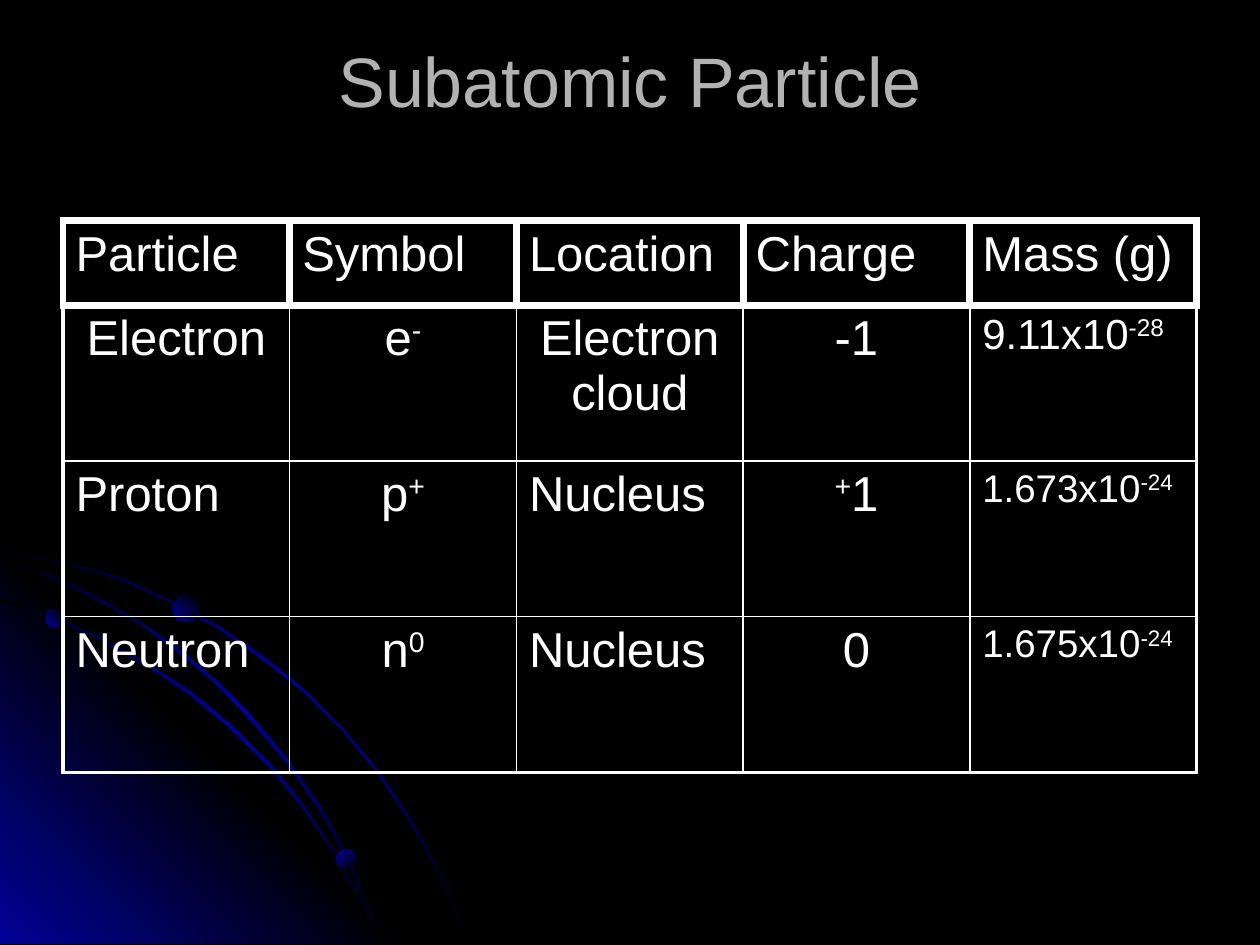
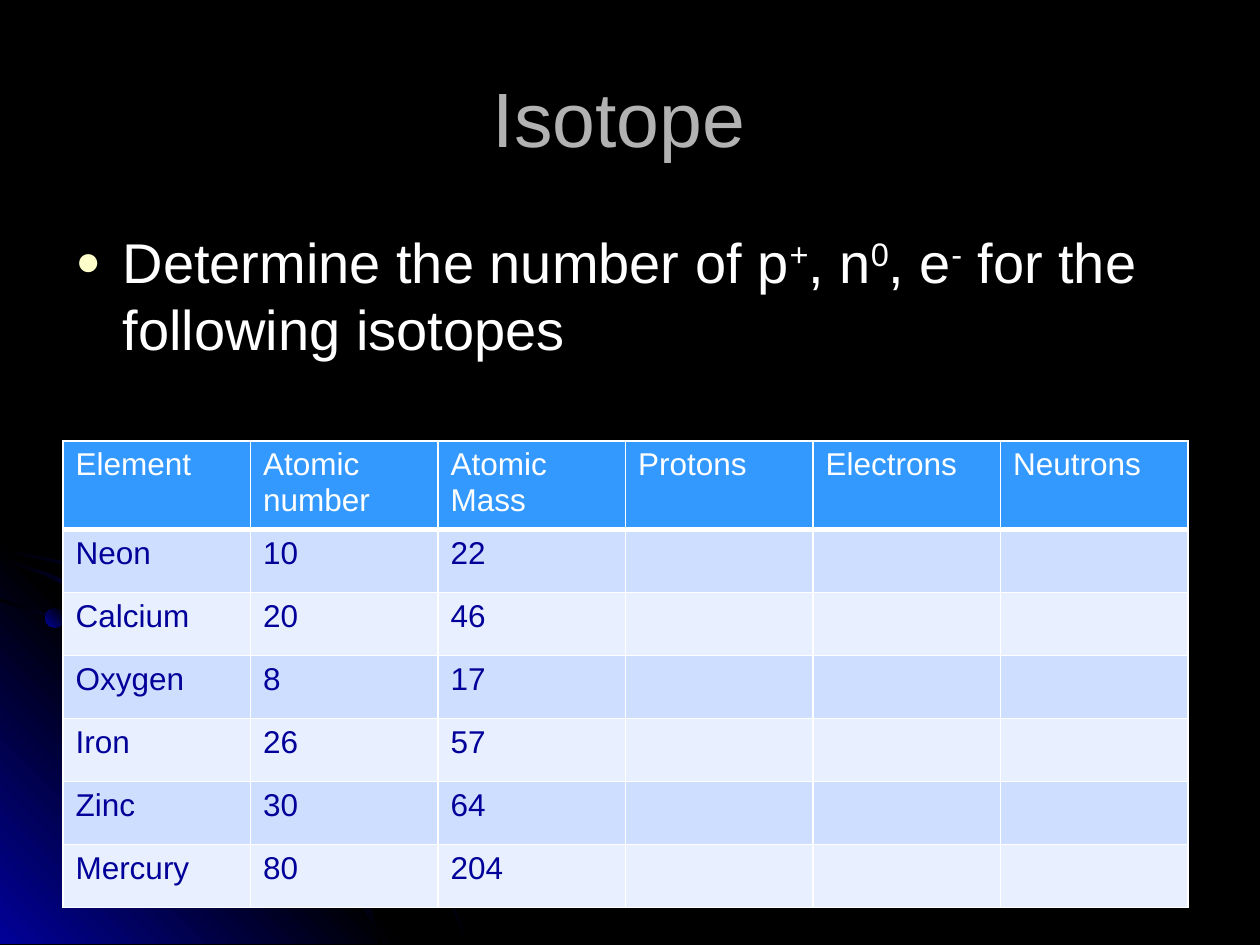
"""Build two chemistry slides: subatomic particles and isotopes."""
from dataclasses import dataclass
from typing import NamedTuple

from lxml import etree
from pptx import Presentation
from pptx import shapes as sh
from pptx import slide as sl
from pptx import table as tb
from pptx import text as tx
from pptx import util as u
from pptx.dml import color as dml
from pptx.enum import shapes as es
from pptx.enum import text as et
from pptx.oxml import ns

FONT = "Arial"
COLOURS = {
    "black": "000000", "white": "FFFFFF", "navy": "010199", "title": "B2B2B2",
    "bullet": "FFFFCC", "header": "3399FF", "band": "CEDEFF", "pale": "E8EFFF",
}
GLOW = ("black", "navy", "black")
CORNER = ("navy", "black", "navy")
BALL = ("navy", "black")
HUNDREDTH_INCH = u.Cm(0.0254)
LEFT = 1.27


class Outline(NamedTuple):
    """A closed outline, in hundredths of an inch, with its gradient."""
    stops: tuple
    angle: int
    points: list


class Electron(NamedTuple):
    """A small ball on an orbit, in centimetres."""
    left: float
    top: float
    size: float
    angle: int


class Entry(NamedTuple):
    """One table cell; parts between carets are superscripts."""
    text: str
    size: float
    centred: bool = False


@dataclass
class Grid:
    """A table with lengths in centimetres and line widths in points."""
    top: float
    column_width: float
    header_height: float
    row_height: float
    rows: list
    text_colours: tuple
    fills: tuple
    header_line: float
    header_bottom: float
    below_header: float
    outer_line: float
    inner_line: float = 1


OUTLINES = [
    Outline(GLOW, 45, [
        (57, 447), (28, 441), (0, 435), (0, 438), (28, 443), (56, 449), (97, 461),
        (135, 478), (173, 499), (208, 523), (241, 549), (271, 579), (298, 612),
        (323, 649), (337, 673), (350, 698), (360, 723), (370, 749), (372, 749),
        (362, 723), (352, 698), (339, 673), (325, 648), (300, 611), (272, 578),
        (242, 548), (209, 521), (174, 497), (136, 477), (98, 459)]),
    Outline(CORNER, 315, [(322, 749), (0, 749), (0, 427)]),
    Outline(GLOW, 45, [
        (285, 714), (294, 732), (301, 749), (303, 749), (296, 730), (286, 712),
        (266, 676), (242, 640), (215, 606), (184, 576), (152, 549), (117, 526),
        (79, 505), (41, 488), (0, 475), (0, 477), (39, 490), (77, 507), (115, 528),
        (150, 551), (183, 578), (213, 608), (240, 641), (265, 677)]),
    Outline(GLOW, 45, [
        (0, 442), (0, 444), (36, 457), (74, 475), (109, 494), (142, 518), (173, 544),
        (202, 575), (227, 605), (252, 641), (267, 667), (280, 694), (292, 722),
        (301, 749), (303, 749), (294, 720), (282, 693), (269, 665), (254, 639),
        (229, 603), (204, 573), (175, 543), (144, 516), (111, 493), (76, 473),
        (39, 455)]),
]
ELECTRONS = [
    Electron(0.91, 12.27, 0.38, 315),
    Electron(6.78, 17.12, 0.41, 45),
    Electron(3.48, 12.01, 0.53, 315),
]

PARTICLES = Grid(
    top=4.45, column_width=4.57, header_height=1.7, row_height=3.14,
    rows=[
        [Entry(name, 28) for name in
         ("Particle", "Symbol", "Location", "Charge", "Mass (g)")],
        [Entry("Electron", 28, True), Entry("e^-^", 28, True),
         Entry("Electron cloud", 28, True), Entry("-1", 28, True),
         Entry("9.11x10^-28^", 24)],
        [Entry("Proton", 28), Entry("p^+^", 28, True), Entry("Nucleus", 28),
         Entry("^+^1", 28, True), Entry("1.673x10^-24^", 22)],
        [Entry("Neutron", 28), Entry("n^0^", 28, True), Entry("Nucleus", 28),
         Entry("0", 28, True), Entry("1.675x10^-24^", 22)],
    ],
    text_colours=("white", "white"), fills=(None, None, None),
    header_line=4.5, header_bottom=4.5, below_header=4.5, outer_line=2.25)

ISOTOPES = Grid(
    top=8.89, column_width=3.78, header_height=1.78, row_height=1.27,
    rows=[[Entry(value, 18) for value in row] for row in (
        ("Element", "Atomic number", "Atomic Mass", "Protons", "Electrons", "Neutrons"),
        ("Neon", "10", "22", "", "", ""),
        ("Calcium", "20", "46", "", "", ""),
        ("Oxygen", "8", "17", "", "", ""),
        ("Iron", "26", "57", "", "", ""),
        ("Zinc", "30", "64", "", "", ""),
        ("Mercury", "80", "204", "", "", ""),
    )],
    text_colours=("white", "navy"), fills=("header", "band", "pale"),
    header_line=1, header_bottom=3, below_header=1, outer_line=1)


def colour(name: str) -> dml.RGBColor:
    """Return a named colour."""
    return dml.RGBColor.from_string(COLOURS[name])


def add_colour(parent: etree.ElementBase, name: str) -> None:
    """Append a named colour to an XML element."""
    etree.SubElement(parent, ns.qn("a:srgbClr"), val=COLOURS[name])


def write(para: "tx.text._Paragraph", text: str, size: float, ink: str) -> None:
    """Write text into a paragraph, raising the parts between carets."""
    for index, piece in enumerate(text.split("^")):
        if not piece:
            continue
        span = para.add_run()
        span.text = piece
        span.font.name = FONT
        span.font.size = u.Pt(size)
        span.font.color.rgb = colour(ink)
        if index % 2:
            span._r.get_or_add_rPr().set("baseline", "30000")


def paint(shape: "sh.base.BaseShape", stops: tuple, angle: int) -> None:
    """Give a shape an evenly stepped gradient without line or shadow."""
    shape.shadow.inherit = False
    shape.line.fill.background()
    shape.fill.gradient()
    shape.fill.gradient_angle = 360 - angle
    stop_list = shape.element.find(".//" + ns.qn("a:gsLst"))
    for old_stop in list(stop_list):
        stop_list.remove(old_stop)
    for index, name in enumerate(stops):
        position = str(100000 * index // (len(stops) - 1))
        add_colour(etree.SubElement(stop_list, ns.qn("a:gs"), pos=position), name)


def decorate_master(master: sl.SlideMaster, slide: sl.Slide) -> None:
    """Set the black background and move the orbit drawing to the master."""
    master.background.fill.solid()
    master.background.fill.fore_color.rgb = colour("black")
    drawing = []
    for outline in OUTLINES:
        builder = slide.shapes.build_freeform(*outline.points[0], scale=HUNDREDTH_INCH)
        builder.add_line_segments(outline.points[1:], close=True)
        shape = builder.convert_to_shape()
        paint(shape, outline.stops, outline.angle)
        drawing.append(shape)
    for electron in ELECTRONS:
        size = u.Cm(electron.size)
        ball = slide.shapes.add_shape(es.MSO_SHAPE.OVAL, u.Cm(electron.left),
                                      u.Cm(electron.top), size, size)
        paint(ball, BALL, electron.angle)
        drawing.append(ball)
    first = master.shapes[0].element
    for number, shape in enumerate(drawing, start=100):
        shape.element.find(".//" + ns.qn("p:cNvPr")).set("id", str(number))
        first.addprevious(shape.element)


def place(box: "sh.base.BaseShape", top: float, height: float) -> None:
    """Place a placeholder at the shared left edge and width."""
    box.left, box.top = u.Cm(LEFT), u.Cm(top)
    box.width, box.height = u.Cm(22.86), u.Cm(height)
    box.text_frame.auto_size = et.MSO_AUTO_SIZE.NONE
    box.text_frame.word_wrap = True


def set_title(slide: sl.Slide, text: str, size: float, raised: bool = False) -> None:
    """Fill the title, at the top of its box when raised."""
    title = slide.shapes.title
    place(title, 0.76, 3.18)
    frame = title.text_frame
    frame.vertical_anchor = et.MSO_ANCHOR.TOP if raised else et.MSO_ANCHOR.MIDDLE
    if raised:
        frame.margin_top = 0
    frame.paragraphs[0].alignment = et.PP_ALIGN.CENTER
    write(frame.paragraphs[0], text, size, "title")


def set_bullet(para: "tx.text._Paragraph") -> None:
    """Give a paragraph the round coloured bullet."""
    properties = para._p.get_or_add_pPr()
    properties.set("marL", str(u.Cm(0.95)))
    properties.set("indent", str(-u.Cm(0.95)))
    add_colour(etree.SubElement(properties, ns.qn("a:buClr")), "bullet")
    etree.SubElement(properties, ns.qn("a:buSzPct"), val="75000")
    etree.SubElement(properties, ns.qn("a:buFont"), typeface=FONT)
    etree.SubElement(properties, ns.qn("a:buChar"), char="●")


def border_widths(grid: Grid, row: int, column: int) -> dict:
    """Return the line widths around a cell by side."""
    if row == 0:
        line = grid.header_line
        return {"L": line, "R": line, "T": line, "B": grid.header_bottom}
    outer, inner = grid.outer_line, grid.inner_line
    return {
        "L": outer if column == 0 else inner,
        "R": outer if column == len(grid.rows[0]) - 1 else inner,
        "T": grid.below_header if row == 1 else inner,
        "B": outer if row == len(grid.rows) - 1 else inner,
    }


def set_borders(cell: "tb._Cell", widths: dict) -> None:
    """Draw white lines around a cell."""
    properties = cell._tc.get_or_add_tcPr()
    for side, width in widths.items():
        line = etree.SubElement(properties, ns.qn(f"a:ln{side}"), w=str(u.Pt(width)))
        add_colour(etree.SubElement(line, ns.qn("a:solidFill")), "white")


def draw_grid(slide: sl.Slide, grid: Grid) -> None:
    """Draw a table with its text, lines and fills."""
    row_count, column_count = len(grid.rows), len(grid.rows[0])
    heights = [grid.header_height] + [grid.row_height] * (row_count - 1)
    table = slide.shapes.add_table(
        row_count, column_count, u.Cm(LEFT), u.Cm(grid.top),
        u.Cm(grid.column_width * column_count), u.Cm(sum(heights))).table
    table.first_row = table.horz_banding = False
    for column in table.columns:
        column.width = u.Cm(grid.column_width)
    for row, entries in enumerate(grid.rows):
        table.rows[row].height = u.Cm(heights[row])
        fill = grid.fills[0 if row == 0 else 2 - row % 2]
        for column, entry in enumerate(entries):
            cell = table.cell(row, column)
            para = cell.text_frame.paragraphs[0]
            para.alignment = et.PP_ALIGN.CENTER if entry.centred else et.PP_ALIGN.LEFT
            write(para, entry.text, entry.size, grid.text_colours[min(row, 1)])
            set_borders(cell, border_widths(grid, row, column))
            if fill:
                cell.fill.solid()
                cell.fill.fore_color.rgb = colour(fill)
            else:
                cell.fill.background()


def main() -> None:
    """Build and save the deck."""
    deck = Presentation()
    deck.slide_width, deck.slide_height = u.Cm(25.4), u.Cm(19.05)

    particles = deck.slides.add_slide(deck.slide_layouts[5])
    decorate_master(deck.slide_master, particles)
    set_title(particles, "Subatomic Particle", 40, raised=True)
    draw_grid(particles, PARTICLES)

    isotopes = deck.slides.add_slide(deck.slide_layouts[1])
    set_title(isotopes, "Isotope ", 44)
    body = isotopes.placeholders[1]
    place(body, 4.45, 12.57)
    task = body.text_frame.paragraphs[0]
    set_bullet(task)
    write(task, "Determine the number of p^+^, n^0^, e^-^ for the following isotopes",
          32, "white")
    draw_grid(isotopes, ISOTOPES)

    deck.save("out.pptx")


if __name__ == "__main__":
    main()
